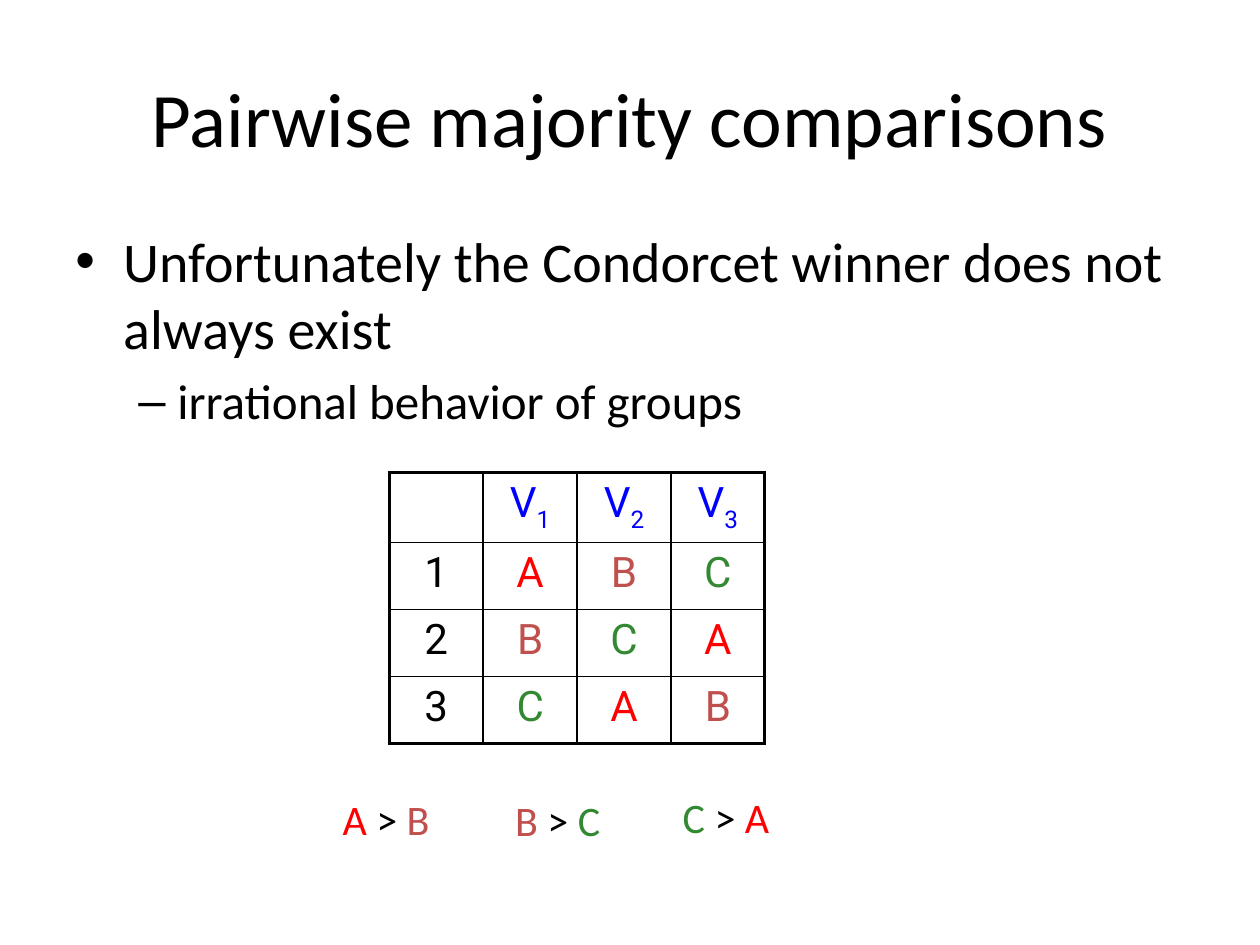
from lxml.etree import SubElement
from pptx import Presentation
from pptx.dml.color import RGBColor
from pptx.enum.text import MSO_ANCHOR as Anchor, MSO_AUTO_SIZE as AutoSize, PP_ALIGN as Align
from pptx.oxml.ns import qn
from pptx.util import Inches, Pt

COLORS = {"text": "000000", "voter": "0000FF", "A": "FF0000", "B": "C0504D", "C": "338931"}
HEADING = {"name": "Calibri", "size": Pt(44)}
BULLET = {"name": "Calibri", "size": Pt(32)}
SUB_BULLET = {"name": "Calibri", "size": Pt(28)}
CELL = {"name": "Roboto", "size": Pt(24)}
PREFERENCE = {"name": "Calibri", "size": Pt(24)}
RANKING = ["ABC", "BCA", "CAB"]
THIN, THICK = Pt(1), Pt(2.25)


def add_span(para, text, style, color="text"):
    """Append a formatted run to a paragraph and return it."""
    span = para.add_run()
    span.text = text
    for name, value in style.items():
        setattr(span.font, name, value)
    span.font.color.rgb = RGBColor.from_string(COLORS[color])
    return span


def space_before(para):
    """Set the space before a paragraph to a fifth of its line."""
    props = para._p.get_or_add_pPr()
    space = SubElement(props, qn("a:spcBef"))
    SubElement(space, qn("a:spcPct"), val="20000")
    return props


def add_box(page, box, **frame_format):
    """Add a text box and return its text frame."""
    frame = page.shapes.add_textbox(*map(Inches, box)).text_frame
    for name, value in frame_format.items():
        setattr(frame, name, value)
    return frame


def add_title(page, box):
    """Place the centred slide title."""
    frame = add_box(page, box, word_wrap=True, vertical_anchor=Anchor.MIDDLE)
    para = frame.paragraphs[0]
    para.alignment = Align.CENTER
    add_span(para, "Pairwise majority comparisons", HEADING)


def add_bullets(page, box):
    """Place the two levels of bulleted text."""
    frame = add_box(page, box, word_wrap=True)
    items = [
        ("Unfortunately the Condorcet winner does not always exist", BULLET, "•", 0.38, 0.38),
        ("irrational behavior of groups", SUB_BULLET, "–", 0.81, 0.31),
    ]
    for level, (text, style, mark, margin, hanging) in enumerate(items):
        para = frame.add_paragraph() if level else frame.paragraphs[0]
        para.level = level
        props = space_before(para)
        props.set("marL", str(Inches(margin)))
        props.set("indent", str(-Inches(hanging)))
        SubElement(props, qn("a:buFont"), typeface="Arial")
        SubElement(props, qn("a:buChar"), char=mark)
        add_span(para, text, style)


def set_borders(cell, widths):
    """Draw the left, right, top and bottom borders of a cell."""
    props = cell._tc.get_or_add_tcPr()
    for side, width in zip("LRTB", widths):
        line = SubElement(props, qn(f"a:ln{side}"), w=str(width))
        fill = SubElement(line, qn("a:solidFill"))
        SubElement(fill, qn("a:srgbClr"), val=COLORS["text"])
    cell.fill.background()


def fill_cell(cell, row, column):
    """Write a voter heading, a rank or a candidate into a cell."""
    if row == column == 0:
        return
    para = cell.text_frame.paragraphs[0]
    para.alignment = Align.CENTER
    space_before(para)
    if row == 0:
        add_span(para, "V", CELL, "voter")
        index = add_span(para, str(column), CELL, "voter")
        index.font._element.set("baseline", "-25000")
    elif column == 0:
        add_span(para, str(row), CELL)
    else:
        candidate = RANKING[row - 1][column - 1]
        add_span(para, candidate, CELL, candidate)


def add_ranking_table(page, box):
    """Place the table of voter rankings."""
    count = len(RANKING) + 1
    last = count - 1
    table = page.shapes.add_table(count, count, *map(Inches, box)).table
    table.first_row = table.horz_banding = False
    for row in range(count):
        for column in range(count):
            cell = table.cell(row, column)
            outer = (column == 0, column == last, row == 0, row == last)
            set_borders(cell, [THICK if edge else THIN for edge in outer])
            fill_cell(cell, row, column)


def add_preference(page, box, winner, loser):
    """Place one pairwise majority result."""
    frame = add_box(page, box, word_wrap=False, auto_size=AutoSize.SHAPE_TO_FIT_TEXT)
    para = frame.paragraphs[0]
    for text, color in ((winner, winner), (" > ", "text"), (loser, loser)):
        add_span(para, text, PREFERENCE, color)


def main():
    """Build the slide and save the deck."""
    deck = Presentation()
    deck.slide_width, deck.slide_height = Inches(10), Inches(7.5)
    page = deck.slides.add_slide(deck.slide_layouts[6])
    add_title(page, (0.5, 0.3, 9, 1.25))
    add_bullets(page, (0.5, 1.75, 9, 4.95))
    add_ranking_table(page, (3.09, 3.75, 2.98, 2.13))
    add_preference(page, (2.62, 6.25, 1.02, 0.5), "A", "B")
    add_preference(page, (3.99, 6.26, 1.04, 0.5), "B", "C")
    add_preference(page, (5.32, 6.23, 1.04, 0.5), "C", "A")
    deck.save("out.pptx")


if __name__ == "__main__":
    main()
